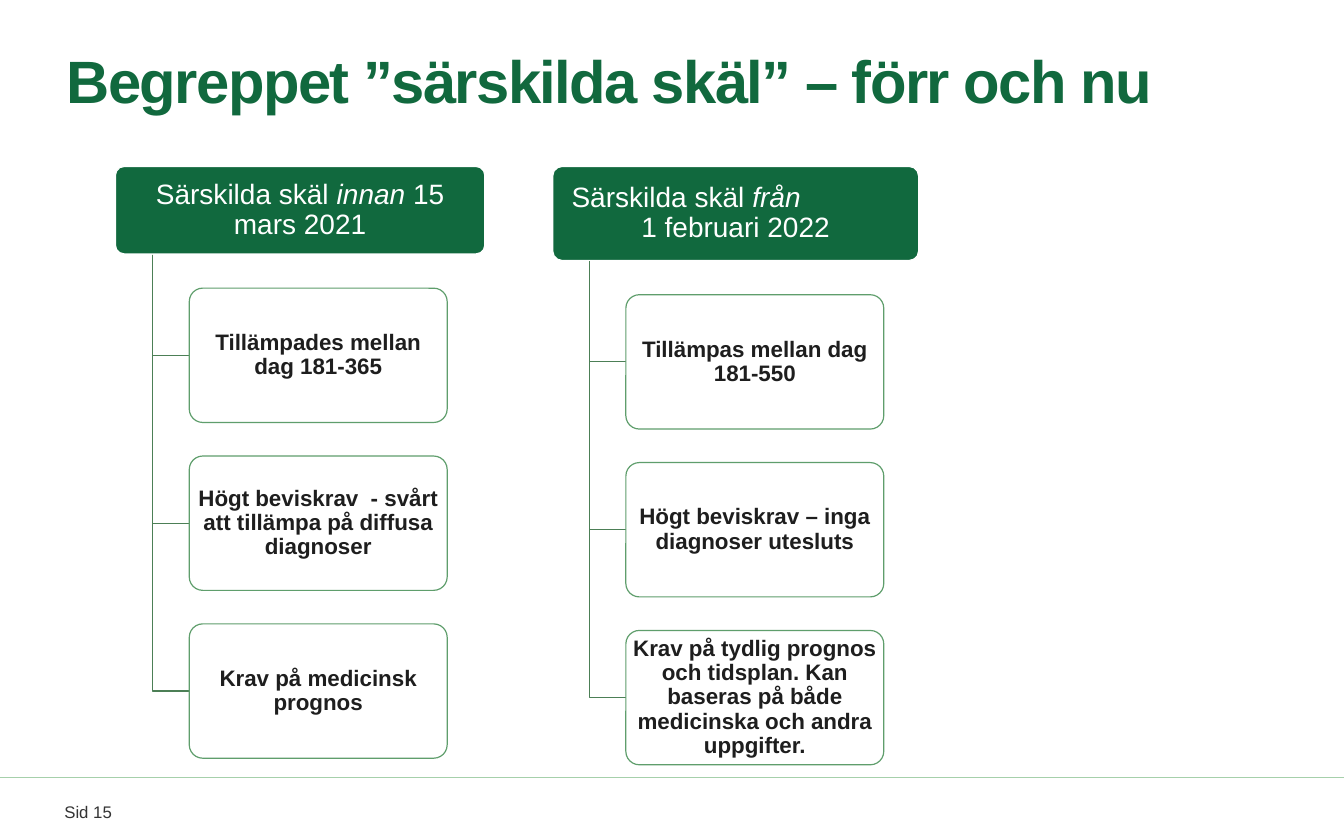
from lxml import etree
from pptx import Presentation
from pptx.dml.color import RGBColor
from pptx.enum.shapes import MSO_CONNECTOR, MSO_SHAPE
from pptx.enum.text import MSO_ANCHOR, MSO_AUTO_SIZE, PP_ALIGN
from pptx.oxml.ns import qn
from pptx.util import Pt

COLORS = {
    "green": "11693E", "branch": "4C7F56", "border": "5F9E6C",
    "rule": "A6D0AB", "white": "FFFFFF", "text": "1E1E1E", "footer": "343434",
}


def color(name):
    return RGBColor.from_string(COLORS[name])


def write(s, *paragraphs, size, ink, bold=False, align=PP_ALIGN.CENTER,
          anchor=MSO_ANCHOR.MIDDLE, inset=0, spacing=0.9):
    """Fill a shape with paragraphs; each is a list of runs, odd runs in italics."""
    tf = s.text_frame
    tf.word_wrap = True
    tf.auto_size = MSO_AUTO_SIZE.NONE
    tf.vertical_anchor = anchor
    tf.margin_left = tf.margin_right = tf.margin_top = tf.margin_bottom = Pt(inset)
    for i, runs in enumerate(paragraphs):
        p = tf.add_paragraph() if i else tf.paragraphs[0]
        p.alignment = align
        p.line_spacing = spacing
        for j, text in enumerate(runs):
            r = p.add_run()
            r.text = text
            r.font.name = "Arial"
            r.font.size = Pt(size)
            r.font.bold = bold
            r.font.italic = j % 2 == 1
            r.font.color.rgb = color(ink)


prs = Presentation()
prs.slide_width, prs.slide_height = Pt(960.5), Pt(600.5)
slide = prs.slides.add_slide(prs.slide_layouts[5])
shapes = slide.shapes

# Footer
rule = shapes.add_connector(MSO_CONNECTOR.STRAIGHT, 0, Pt(555.8), prs.slide_width, Pt(555.8))
rule.line.color.rgb = color("rule")
rule.line.width = Pt(1)
etree.SubElement(rule._element.spPr, qn("a:effectLst"))
page = shapes.add_textbox(Pt(46), Pt(573), Pt(340), Pt(14.4))
write(page, ["Sid 15"], size=12, ink="footer", align=PP_ALIGN.LEFT,
      anchor=MSO_ANCHOR.TOP, spacing=1)

# Title
title = shapes.title
title.left, title.top, title.width, title.height = Pt(47.5), Pt(10), Pt(857.5), Pt(100)
write(title, ["Begreppet ”särskilda skäl” – förr och nu"], size=42.7, ink="green",
      bold=True, align=PP_ALIGN.LEFT)
title.text_frame.paragraphs[0].runs[0].font._element.set("spc", "-110")

# Two columns: a header with three boxes hanging from it
TOP, BOX_W, BOX_H, GAP = 119, 184.3, 96, 24
columns = [
    (82.5, 264, 62.5, 0, [["Särskilda skäl ", "innan", " 15 mars 2021"]],
     ["Tillämpades mellan dag 181-365",
      "Högt beviskrav  - svårt att tillämpa på diffusa diagnoser",
      "Krav på medicinsk prognos"]),
    (395, 261.5, 67.2, 8.5, [["Särskilda skäl ", "från"], ["1 februari 2022"]],
     ["Tillämpas mellan dag 181-550",
      "Högt beviskrav – inga diagnoser utesluts",
      "Krav på tydlig prognos och tidsplan. Kan baseras på både medicinska "
      "och andra uppgifter."]),
]
for left, width, height, first_indent, heading, reasons in columns:
    header = shapes.add_shape(MSO_SHAPE.ROUNDED_RECTANGLE, Pt(left), Pt(TOP), Pt(width), Pt(height))
    header.adjustments[0] = 0.1
    header.shadow.inherit = False
    header.fill.solid()
    header.fill.fore_color.rgb = color("green")
    header.line.color.rgb = color("white")
    header.line.width = Pt(0.85)
    write(header, *heading, size=20, ink="white", inset=3)
    if first_indent:
        p = header.text_frame.paragraphs[0]
        p.alignment = PP_ALIGN.LEFT
        p._p.get_or_add_pPr().set("marL", str(Pt(first_indent)))

    trunk_x, box_x, bottom = left + width * 0.1, left + width * 0.2, TOP + height + 0.5
    for i, reason in enumerate(reasons):
        box_y = bottom + GAP + i * (BOX_H + GAP)
        middle = box_y + BOX_H / 2
        builder = shapes.build_freeform(Pt(trunk_x), Pt(bottom))
        builder.add_line_segments([(Pt(trunk_x), Pt(middle)), (Pt(box_x), Pt(middle))], close=False)
        branch = builder.convert_to_shape()
        branch.shadow.inherit = False
        branch.fill.background()
        branch.line.color.rgb = color("branch")
        branch.line.width = Pt(0.85)

        box = shapes.add_shape(MSO_SHAPE.ROUNDED_RECTANGLE, Pt(box_x), Pt(box_y), Pt(BOX_W), Pt(BOX_H))
        box.adjustments[0] = 0.1
        box.shadow.inherit = False
        box.fill.solid()
        box.fill.fore_color.rgb = color("white")
        box.line.color.rgb = color("border")
        box.line.width = Pt(0.85)
        write(box, [reason], size=16, ink="text", bold=True, inset=1.5)

prs.save("out.pptx")
